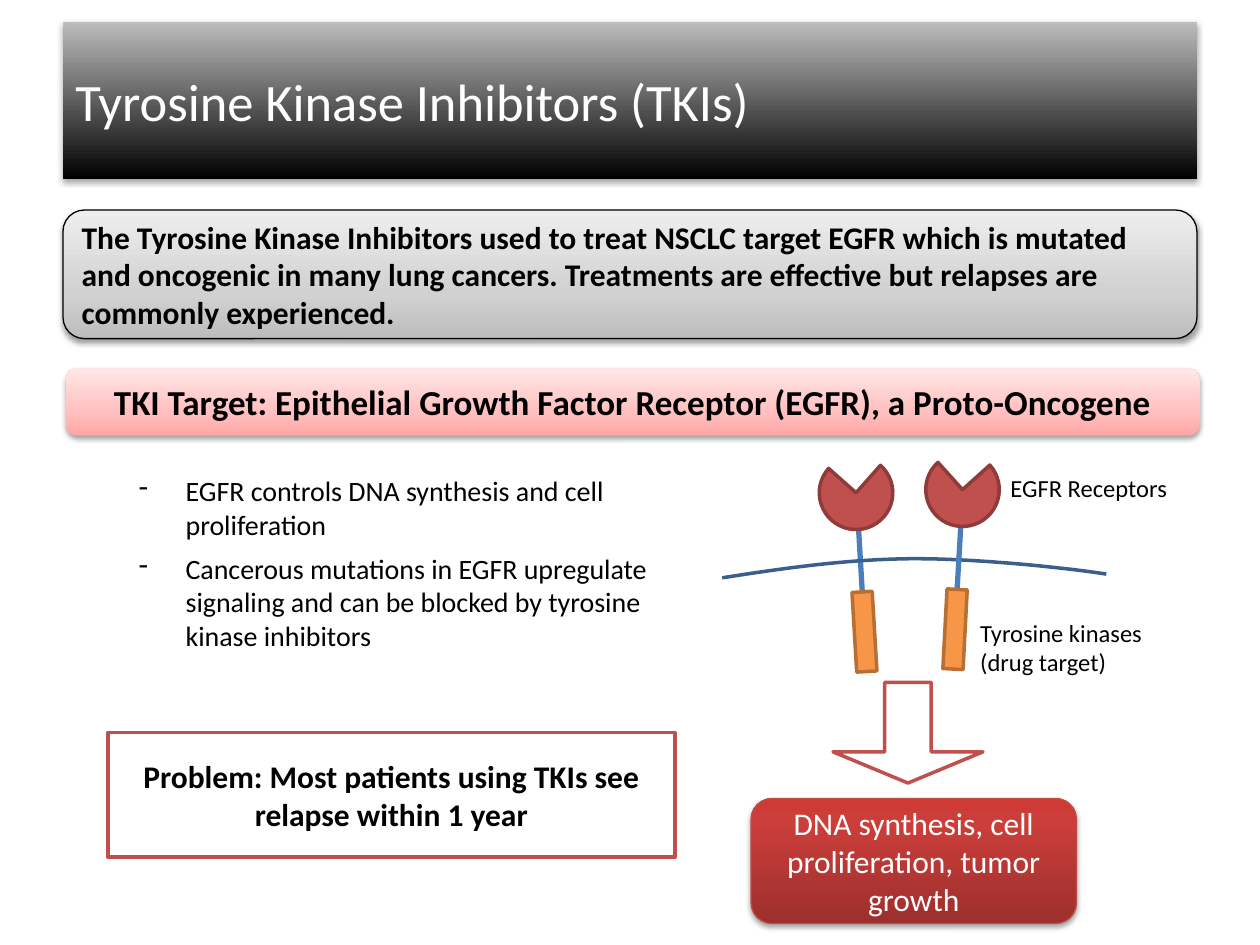
from lxml import etree
from pptx import Presentation
from pptx.dml.color import RGBColor
from pptx.enum import shapes, text
from pptx.oxml.ns import qn
from pptx.util import Pt

BLACK = RGBColor(0x00, 0x00, 0x00)
WHITE = RGBColor(0xFF, 0xFF, 0xFF)
RED = RGBColor(0xC0, 0x50, 0x4D)
DARK_RED = RGBColor(0x8E, 0x3B, 0x39)
BOX_RED = RGBColor(0xBF, 0x4C, 0x48)
ORANGE = RGBColor(0xF7, 0x96, 0x46)
DARK_ORANGE = RGBColor(0xB7, 0x6F, 0x34)
BLUE = RGBColor(0x4B, 0x7E, 0xBC)
DARK_BLUE = RGBColor(0x3A, 0x5F, 0x8C)

SHAPE = shapes.MSO_SHAPE
LEFT, CENTER = text.PP_ALIGN.LEFT, text.PP_ALIGN.CENTER
TOP, MIDDLE = text.MSO_ANCHOR.TOP, text.MSO_ANCHOR.MIDDLE

# Gradients run from the bottom of a shape to its top: (percent, colour)
TITLE_GRADIENT = [(0, "000000"), (100, "BDBDBD")]
GREY_GRADIENT = [(0, "BDBDBD"), (35, "D1D1D1"), (100, "EEEEEE")]
PINK_GRADIENT = [(0, "FFA6A5"), (35, "FFC0BF"), (100, "FFE7E7")]
RED_GRADIENT = [(0, "9C2F2D"), (80, "CB3E3A"), (100, "CE3B37")]

# Shadow: opacity in percent, distance in points
STRONG_SHADOW, SOFT_SHADOW = (35, 1.8), (38, 1.6)

# kind, box, gradient, (line colour, width), shadow, text, size, bold, colour, alignment
PANELS = [
    (SHAPE.RECTANGLE, (36, 12.5, 648, 90), TITLE_GRADIENT, None, STRONG_SHADOW,
     "Tyrosine Kinase Inhibitors (TKIs)", 30, False, WHITE, LEFT),
    (SHAPE.ROUNDED_RECTANGLE, (36, 120, 648, 73.5), GREY_GRADIENT, (BLACK, 0.75), SOFT_SHADOW,
     "The Tyrosine Kinase Inhibitors used to treat NSCLC target EGFR which is mutated and "
     "oncogenic in many lung cancers. Treatments are effective but relapses are commonly "
     "experienced.", 18, True, BLACK, LEFT),
    (SHAPE.ROUNDED_RECTANGLE, (37.5, 210.5, 648, 38.5), PINK_GRADIENT, None, SOFT_SHADOW,
     "TKI Target: Epithelial Growth Factor Receptor (EGFR), a Proto-Oncogene",
     20, True, BLACK, CENTER),
    (SHAPE.ROUNDED_RECTANGLE, (429.2, 456.3, 186, 71.5), RED_GRADIENT, (BOX_RED, 0.75),
     STRONG_SHADOW, "DNA synthesis, cell proliferation, tumor growth", 18, False, WHITE, CENTER),
    (SHAPE.RECTANGLE, (61.7, 418.5, 324, 71.3), WHITE, (RED, 2), None,
     "Problem: Most patients using TKIs see relapse within 1 year", 18, True, BLACK, CENTER),
]
BULLETS = [
    "EGFR controls DNA synthesis and cell proliferation",
    "Cancerous mutations in EGFR upregulate signaling and can be blocked by tyrosine "
    "kinase inhibitors",
]
LABELS = [
    ("EGFR Receptors", (570.3, 267, 136, 24.2)),
    ("Tyrosine kinases (drug target)", (553, 349.3, 136, 41.2)),
]
# stem start, stem end, head corner, head rotation, kinase corner, kinase rotation
RECEPTORS = [
    ((490.3, 296.6), (493.2, 346.3), (468.2, 260.6), 311.6, (488.2, 338.2), 356.6),
    ((549.4, 294.5), (546.5, 344.2), (529, 258.8), 318, (540, 336.8), 3),
]
HEAD_SIZE, KINASE_SIZE = (42, 42), (11.6, 45.6)
MEMBRANE = [  # two cubic curves, each with its four control points
    [(412.7, 330.2), (447.8, 324.7), (483.1, 319.7), (519.8, 319.3)],
    [(519.8, 319.3), (556.6, 318.9), (611.3, 324.7), (632.2, 328.1)],
]
CURVE_STEPS = 24


def set_line(sp, line):
    if line:
        sp.line.color.rgb, sp.line.width = line[0], Pt(line[1])
    else:
        sp.line.fill.background()


def add_shape(kind, box, fill, line, rotation=0):
    sp = s.shapes.add_shape(kind, *map(Pt, box))
    sp.shadow.inherit = False
    sp.rotation = rotation
    set_line(sp, line)
    if isinstance(fill, RGBColor):
        sp.fill.solid()
        sp.fill.fore_color.rgb = fill
    else:
        sp.fill.gradient()
        sp.fill.gradient_angle = 90
        stops = sp.element.spPr.find(".//" + qn("a:gsLst"))
        stops.clear()
        for percent, colour in fill:
            stop = etree.SubElement(stops, qn("a:gs"), pos=str(percent * 1000))
            etree.SubElement(stop, qn("a:srgbClr"), val=colour)
    return sp


def add_shadow(sp, opacity, distance):
    effects = sp.element.spPr.find(qn("a:effectLst"))
    outer = etree.SubElement(effects, qn("a:outerShdw"), blurRad=str(Pt(3.1)),
                             dist=str(Pt(distance)), dir="5400000", rotWithShape="0")
    colour = etree.SubElement(outer, qn("a:srgbClr"), val=str(BLACK))
    etree.SubElement(colour, qn("a:alpha"), val=str(opacity * 1000))


def write(sp, paragraphs, size, bold=False, colour=BLACK, align=LEFT, anchor=TOP):
    tf = sp.text_frame
    tf.word_wrap = True
    tf.vertical_anchor = anchor
    tf.text = "\n".join(paragraphs)
    for p in tf.paragraphs:
        p.alignment = align
        for r in p.runs:
            r.font.name, r.font.size, r.font.bold = "Calibri", Pt(size), bold
            r.font.color.rgb = colour
    return tf


def add_text_box(box, paragraphs, size):
    return write(s.shapes.add_textbox(*map(Pt, box)), paragraphs, size)


def curve_point(controls, t):
    """Point of a cubic curve at t, from 0 to 1."""
    weights = ((1 - t) ** 3, 3 * t * (1 - t) ** 2, 3 * t ** 2 * (1 - t), t ** 3)
    return tuple(100 * sum(w * c[axis] for w, c in zip(weights, controls)) for axis in (0, 1))


def add_membrane():
    points = [curve_point(c, i / CURVE_STEPS) for c in MEMBRANE for i in range(CURVE_STEPS + 1)]
    builder = s.shapes.build_freeform(*points[0], scale=Pt(1) / 100)
    builder.add_line_segments(points[1:], close=False)
    sp = builder.convert_to_shape()
    sp.shadow.inherit = False
    sp.fill.background()
    set_line(sp, (DARK_BLUE, 2))


def add_receptor(start, end, head, head_rotation, kinase, kinase_rotation):
    stem = s.shapes.add_connector(shapes.MSO_CONNECTOR.STRAIGHT, *map(Pt, start + end))
    set_line(stem, (BLUE, 3))
    etree.SubElement(stem.element.spPr, qn("a:effectLst"))
    add_shape(SHAPE.PIE, head + HEAD_SIZE, RED, (DARK_RED, 2), head_rotation)
    add_shape(SHAPE.RECTANGLE, kinase + KINASE_SIZE, ORANGE, (DARK_ORANGE, 2), kinase_rotation)


prs = Presentation()
prs.slide_width, prs.slide_height = Pt(720), Pt(540)
s = prs.slides.add_slide(prs.slide_layouts[6])

add_receptor(*RECEPTORS[0])
add_membrane()
add_receptor(*RECEPTORS[1])

arrow = add_shape(SHAPE.DOWN_ARROW, (476, 390, 85.7, 57.5), WHITE, (RED, 2))
arrow.adjustments[0], arrow.adjustments[1] = 0.31, 0.31

for kind, box, fill, line, shadow, words, size, bold, colour, align in PANELS:
    sp = add_shape(kind, box, fill, line)
    if shadow:
        add_shadow(sp, *shadow)
    write(sp, [words], size, bold, colour, align, MIDDLE)

tf = add_text_box((36, 267, 360, 110), BULLETS, 16)
for p in tf.paragraphs:
    p.level = 1
    p.space_after = Pt(6)
    pPr = p._p.get_or_add_pPr()
    pPr.set("marL", str(Pt(63)))
    pPr.set("indent", str(Pt(-27)))
    etree.SubElement(pPr, qn("a:buChar"), char="‐")

for words, box in LABELS:
    add_text_box(box, [words], 14)

prs.save("out.pptx")
